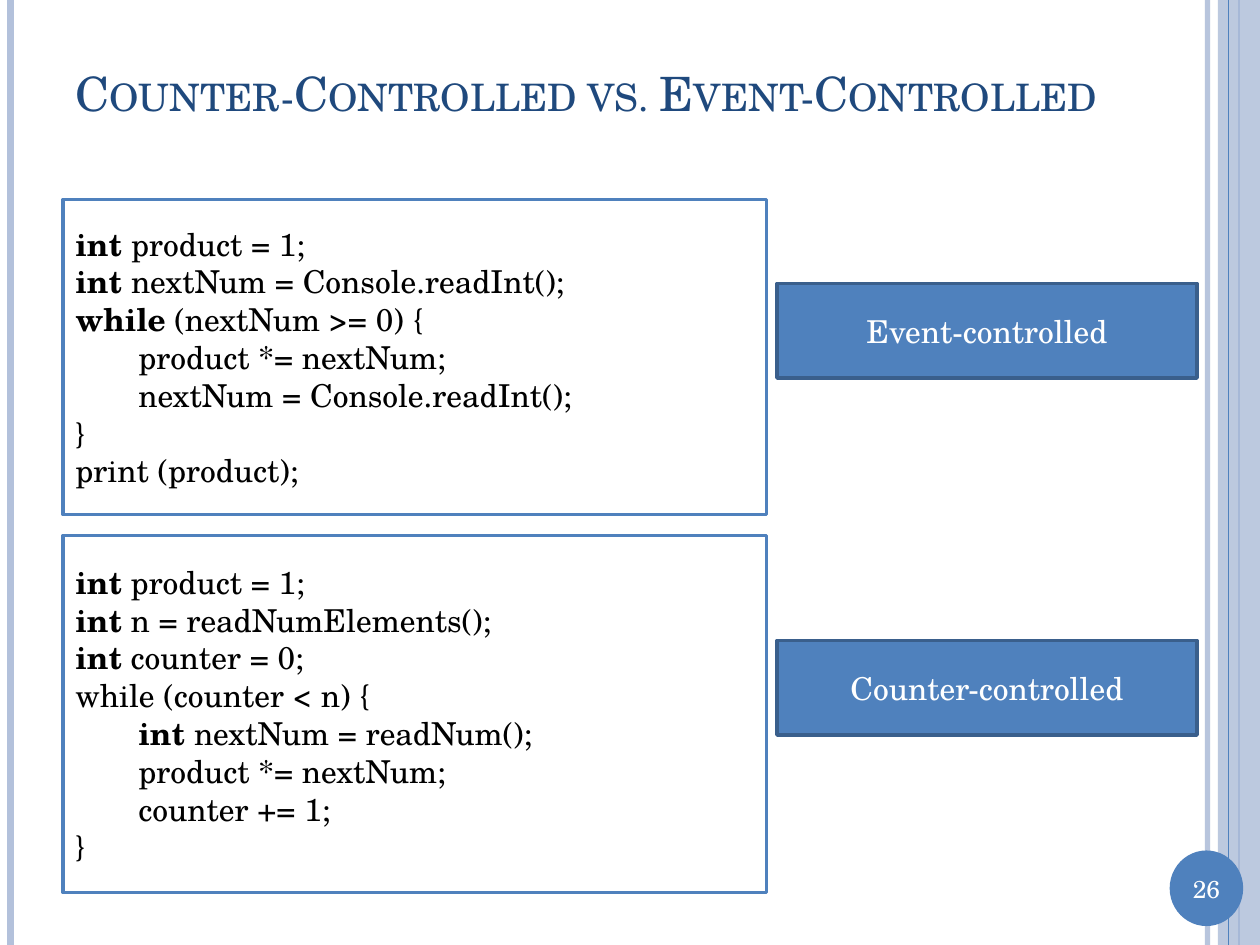
"""Build the slide that compares counter-controlled and event-controlled loops."""
import lxml.etree
import pptx
import pptx.dml.color
import pptx.enum.shapes
import pptx.enum.text
import pptx.oxml.ns
import pptx.util

PX = 914400 // 120
FONT = "TeX Gyre Schola"
COLORS = {
    "navy": "1F497D",
    "blue": "4F81BD",
    "edge": "3A5F8C",
    "pale": "B3C1DB",
    "white": "FFFFFF",
    "black": "000000",
}
SHAPES = pptx.enum.shapes.MSO_SHAPE
ALIGN = pptx.enum.text.PP_ALIGN
ANCHOR = pptx.enum.text.MSO_ANCHOR

EVENT_CODE = [
    "`int `product = 1;",
    "`int `nextNum = Console.readInt();",
    "`while` (nextNum >= 0) {",
    "\tproduct *= nextNum;",
    "\tnextNum = Console.readInt();",
    "}",
    "print (product);",
]
COUNTER_CODE = [
    "`int` product = 1;",
    "`int` n = readNumElements();",
    "`int` counter = 0;",
    "while (counter < n) {",
    "\t`int `nextNum = readNum();",
    "\tproduct *= nextNum;",
    "\tcounter += 1;",
    "}",
]


class SlideBuilder:
    """Hold the style and the current slide, and add elements to it."""

    def __init__(self, slide):
        self.slide = slide

    def emu(self, *lengths):
        """Turn px lengths into EMU."""
        return [pptx.util.Emu(length * PX) for length in lengths]

    def paint(self, target, color, alpha=None):
        """Give a fill a solid colour, with an optional opacity in percent."""
        target.solid()
        target.fore_color.rgb = pptx.dml.color.RGBColor.from_string(COLORS[color])
        if alpha is not None:
            solid = target._xPr.find(pptx.oxml.ns.qn("a:solidFill"))
            opacity = lxml.etree.SubElement(solid[0], pptx.oxml.ns.qn("a:alpha"))
            opacity.set("val", str(alpha * 1000))

    def rule(self, x, color, width, alpha=None):
        """Add a vertical line over the full height of the slide."""
        rule = self.slide.shapes.add_connector(
            pptx.enum.shapes.MSO_CONNECTOR.STRAIGHT, *self.emu(x, 0, x, 900))
        rule.line.width = pptx.util.Pt(width)
        self.paint(rule.line.fill, color, alpha)
        lxml.etree.SubElement(rule._element.spPr, pptx.oxml.ns.qn("a:effectLst"))

    def block(self, box, fill, edge=None, kind=SHAPES.RECTANGLE, alpha=None):
        """Add a filled shape, with a 2 pt outline if an edge colour is given."""
        block = self.slide.shapes.add_shape(kind, *self.emu(*box))
        block.shadow.inherit = False
        self.paint(block.fill, fill, alpha)
        if edge:
            block.line.width = pptx.util.Pt(2)
            self.paint(block.line.fill, edge)
        else:
            block.line.fill.background()
        return block

    def text_box(self, box):
        """Add an empty text box."""
        return self.slide.shapes.add_textbox(*self.emu(*box))

    def add_lines(self, shape, lines, color, size=18, align=ALIGN.LEFT, small_caps=False):
        """Put lines into a shape; words between backticks are bold."""
        frame = shape.text_frame
        frame_format = {"word_wrap": True, "vertical_anchor": ANCHOR.MIDDLE}
        for name, value in frame_format.items():
            setattr(frame, name, value)
        for index, line in enumerate(lines):
            paragraph = frame.add_paragraph() if index else frame.paragraphs[0]
            paragraph.alignment = align
            for part, words in enumerate(line.split("`")):
                if not words:
                    continue
                run = paragraph.add_run()
                run.text = words
                font_format = {"name": FONT, "size": pptx.util.Pt(size), "bold": part % 2 == 1}
                for name, value in font_format.items():
                    setattr(run.font, name, value)
                self.paint(run.font.fill, color)
                if small_caps:
                    run.font._element.set("cap", "small")


def main():
    """Build and save the slide."""
    deck = pptx.Presentation()
    deck.slide_width, deck.slide_height = 1200 * PX, 900 * PX
    builder = SlideBuilder(deck.slides.add_slide(deck.slide_layouts[6]))

    builder.rule(1150, "pale", 3, alpha=93)
    builder.rule(10, "pale", 4.5)
    builder.rule(1180, "blue", 1.5)
    builder.block((1160, 0, 40, 900), "pale", alpha=87)
    builder.rule(1170, "blue", 0.75)
    builder.block((1114, 810, 70, 72), "blue", kind=SHAPES.OVAL)
    page_number = builder.text_box((1114, 826, 70, 41))
    builder.add_lines(page_number, ["26"], "white", size=14, align=ALIGN.CENTER)

    title = builder.text_box((60, 36, 1040, 104))
    builder.add_lines(title, ["Counter-Controlled vs. Event-Controlled"], "navy",
                      size=27, small_caps=True)

    loops = [
        (190, 300, EVENT_CODE, 270, "Event-controlled"),
        (510, 340, COUNTER_CODE, 610, "Counter-controlled"),
    ]
    for code_top, code_height, code, label_top, label in loops:
        listing = builder.block((60, code_top, 670, code_height), "white", "blue")
        builder.add_lines(listing, code, "black")
        loop_type = builder.block((740, label_top, 400, 90), "blue", "edge")
        builder.add_lines(loop_type, [label], "white", align=ALIGN.CENTER)

    deck.save("out.pptx")


if __name__ == "__main__":
    main()
